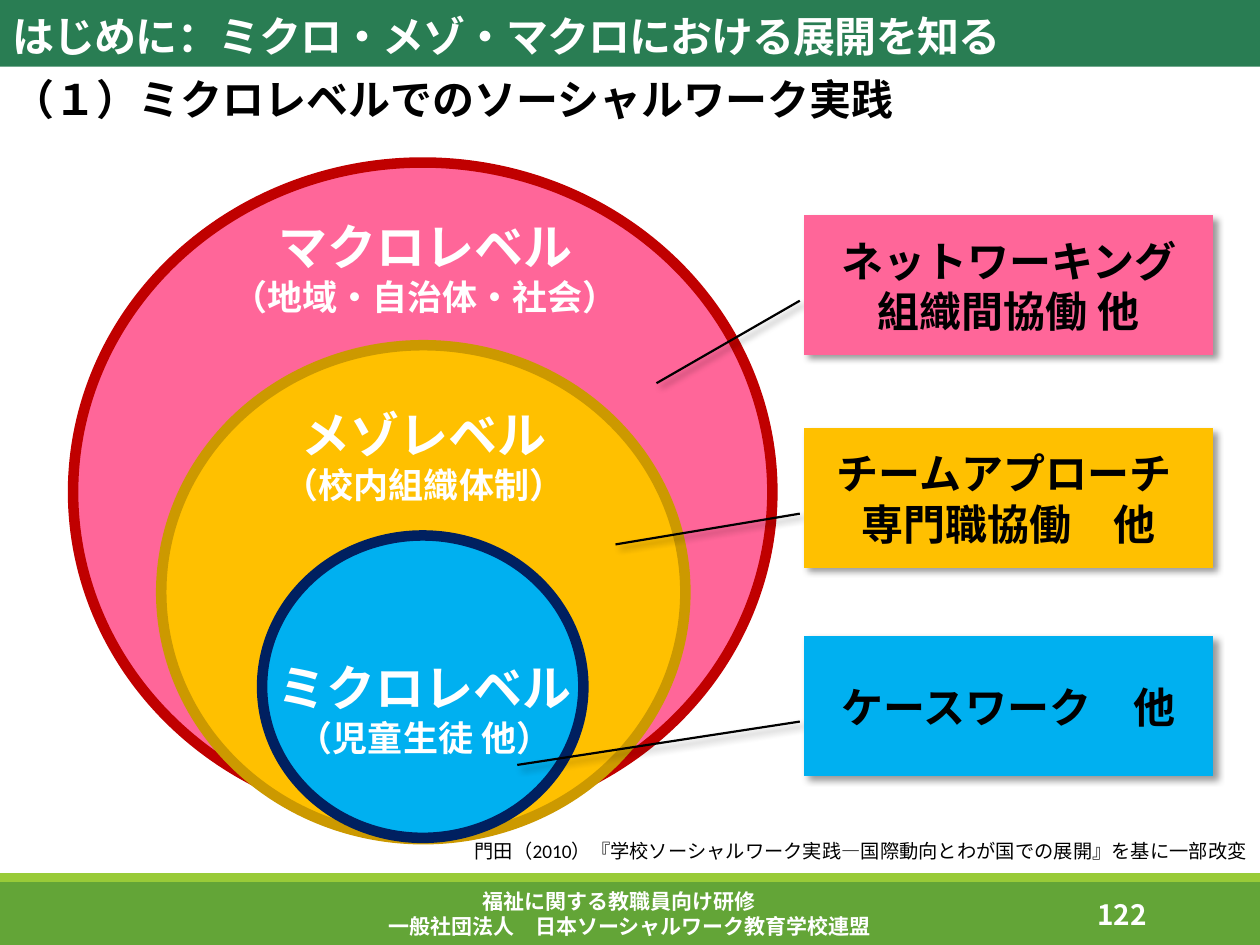
from lxml.etree import SubElement
from pptx import Presentation
from pptx.dml.color import RGBColor
from pptx.enum.shapes import MSO_SHAPE
from pptx.enum.text import MSO_ANCHOR, MSO_AUTO_SIZE as AutoSize, PP_ALIGN
from pptx.oxml.ns import qn
from pptx.util import Inches, Pt

WHITE = RGBColor(0xFF, 0xFF, 0xFF)
BLACK = RGBColor(0x00, 0x00, 0x00)
TITLE_GREEN = RGBColor(0x29, 0x7D, 0x53)
FOOTER_GREEN = RGBColor(0x63, 0xA5, 0x37)
STRIPE_GREEN = RGBColor(0x99, 0xCB, 0x38)
PINK = RGBColor(0xFF, 0x66, 0x99)
RED = RGBColor(0xC0, 0x00, 0x00)
AMBER = RGBColor(0xFF, 0xC0, 0x00)
OCHRE = RGBColor(0xCC, 0x99, 0x00)
BLUE = RGBColor(0x00, 0xB0, 0xF0)
NAVY = RGBColor(0x00, 0x20, 0x60)

CALLOUT_LEFT, CALLOUT_WIDTH, CALLOUT_HEIGHT = 6.38, 3.25, 1.11

LEVELS = [
    ("マクロレベル", "（地域・自治体・社会）", PINK, RED,
     (0.58, 1.29, 5.55, 5.23), (1.73, 1.67, 3.29, 0.91)),
    ("メゾレベル", "（校内組織体制）", AMBER, OCHRE,
     (1.28, 2.74, 4.16, 3.92), (2.14, 3.16, 2.45, 0.91)),
    ("ミクロレベル", "（児童生徒 他）", BLUE, NAVY,
     (2.08, 4.25, 2.55, 2.4), (2.09, 5.17, 2.56, 0.91)),
]
CALLOUTS = [
    (["ケースワーク　他"], BLUE, 5.05, (0.92, -0.7)),
    (["チームアプローチ ", "専門職協働　他"], AMBER, 3.4, (0.83, -0.46)),
    (["ネットワーキング", "組織間協働 他"], PINK, 1.71, (1.2, -0.36)),
]


class SlideBuilder:
    font_name = "Noto Sans CJK JP"

    def __init__(self, slide):
        self.slide = slide

    def fill_text(self, shape, lines, color, align=PP_ALIGN.CENTER,
                  anchor=MSO_ANCHOR.TOP, fit=AutoSize.SHAPE_TO_FIT_TEXT,
                  wrap=True, bold=True, font_name=font_name):
        frame = shape.text_frame
        frame.word_wrap = wrap
        frame.auto_size = fit
        frame.vertical_anchor = anchor
        for index, (text, size) in enumerate(lines):
            paragraph = frame.add_paragraph() if index else frame.paragraphs[0]
            paragraph.alignment = align
            run = paragraph.add_run()
            run.text = text
            run.font.name = font_name
            run.font.size = Pt(size)
            run.font.bold = bold
            run.font.color.rgb = color

    def placeholder(self, index, box, text, color):
        shape = self.slide.placeholders[index]
        shape.left, shape.top, shape.width, shape.height = map(Inches, box)
        self.fill_text(shape, [(text, 24)], color, align=PP_ALIGN.LEFT)
        return shape

    def title(self, box, text):
        shape = self.placeholder(0, box, text, WHITE)
        shape.fill.solid()
        shape.fill.fore_color.rgb = TITLE_GREEN
        shape.text_frame.vertical_anchor = MSO_ANCHOR.BOTTOM
        paragraph = shape.text_frame.paragraphs[0]
        paragraph.line_spacing = 1.5
        paragraph.runs[0]._r.get_or_add_rPr().set("spc", "-50")

    def heading(self, box, text):
        shape = self.placeholder(1, box, text, BLACK)
        paragraph = shape.text_frame.paragraphs[0]
        properties = paragraph._p.get_or_add_pPr()
        properties.set("marL", "0")
        properties.set("indent", "0")
        SubElement(properties, qn("a:buNone"))
        paragraph.space_before = Pt(0)

    def text(self, box, lines, color, **style):
        shape = self.slide.shapes.add_textbox(*map(Inches, box))
        self.fill_text(shape, lines, color, **style)

    def shape(self, kind, box, fill, line=None, width=0):
        shape = self.slide.shapes.add_shape(kind, *map(Inches, box))
        shape.shadow.inherit = False
        shape.fill.solid()
        shape.fill.fore_color.rgb = fill
        if line is None:
            shape.line.fill.background()
        else:
            shape.line.color.rgb = line
            shape.line.width = Pt(width)
        return shape

    def callout(self, lines, fill, top, tip):
        box = (CALLOUT_LEFT, top, CALLOUT_WIDTH, CALLOUT_HEIGHT)
        shape = self.shape(MSO_SHAPE.LINE_CALLOUT_1_NO_BORDER, box, fill, BLACK, 1.25)
        for index, value in enumerate((0.61, -0.01, *tip)):
            shape.adjustments[index] = value
        effects = shape._element.spPr.find(qn("a:effectLst"))
        shadow = SubElement(effects, qn("a:outerShdw"), blurRad=str(Pt(4)),
                            dist=str(Pt(3)), dir="2700000", algn="tl", rotWithShape="0")
        color = SubElement(shadow, qn("a:srgbClr"), val=str(BLACK))
        SubElement(color, qn("a:alpha"), val="40000")
        self.fill_text(shape, [(line, 24) for line in lines], BLACK,
                       anchor=MSO_ANCHOR.MIDDLE, fit=AutoSize.NONE)


def main():
    presentation = Presentation()
    presentation.slide_width = Inches(10)
    presentation.slide_height = Inches(7.5)
    slide = presentation.slides.add_slide(presentation.slide_layouts[1])
    builder = SlideBuilder(slide)

    builder.title((0, -0.07, 10, 0.6), "はじめに：ミクロ・メゾ・マクロにおける展開を知る")
    builder.heading((0, 0.53, 10, 0.5), "（１）ミクロレベルでのソーシャルワーク実践")
    builder.shape(MSO_SHAPE.RECTANGLE, (0, 7, 10, 0.5), FOOTER_GREEN)
    builder.shape(MSO_SHAPE.RECTANGLE, (0, 6.93, 10, 0.07), STRIPE_GREEN)

    for name, scope, fill, line, ellipse_box, label_box in LEVELS:
        builder.shape(MSO_SHAPE.OVAL, ellipse_box, fill, line, 6)
    for name, scope, fill, line, ellipse_box, label_box in LEVELS:
        builder.text(label_box, [(name, 28), (scope, 20)], WHITE, wrap=False)
    for callout in CALLOUTS:
        builder.callout(*callout)

    builder.text((2.08, 6.61, 7.92, 0.29),
                 [("門田（2010）『学校ソーシャルワーク実践―国際動向とわが国での展開』を基に一部改変", 11)],
                 BLACK, align=PP_ALIGN.RIGHT, bold=False, font_name="Calibri")
    builder.text((0, 7, 10, 0.5),
                 [("福祉に関する教職員向け研修　", 12),
                  ("一般社団法人　日本ソーシャルワーク教育学校連盟", 12)], WHITE)
    builder.text((8.12, 7.06, 1.08, 0.4), [("122", 16)], WHITE, align=PP_ALIGN.RIGHT,
                 anchor=MSO_ANCHOR.MIDDLE, fit=AutoSize.NONE)

    presentation.save("out.pptx")


if __name__ == "__main__":
    main()
